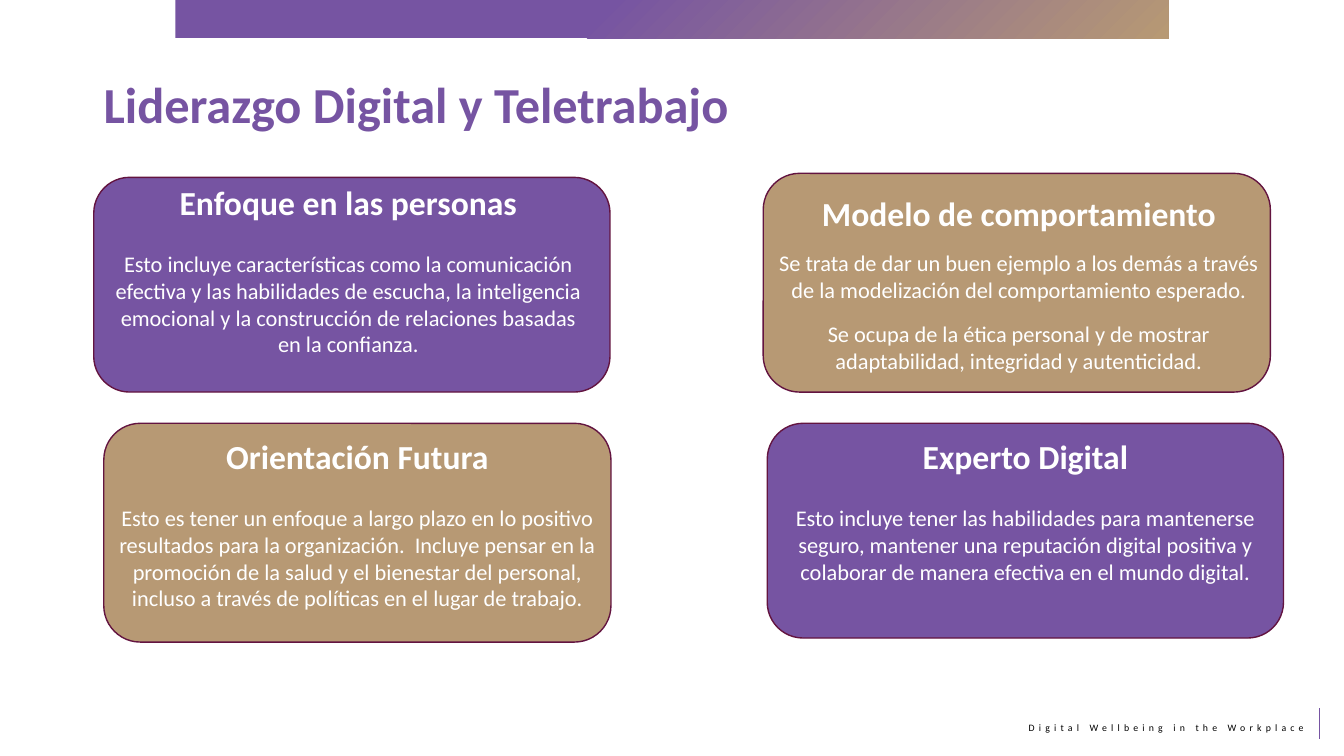
from dataclasses import dataclass

from lxml.etree import SubElement
from pptx import Presentation
from pptx.dml.color import RGBColor
from pptx.enum.shapes import MSO_CONNECTOR as Connector, MSO_SHAPE as Shape
from pptx.enum.text import MSO_ANCHOR as Anchor, PP_ALIGN as Align
from pptx.oxml import parse_xml
from pptx.oxml.ns import nsdecls, qn
from pptx.util import Inches, Pt


@dataclass(frozen=True)
class Theme:
    font: str = "Calibri"
    purple: str = "7654A2"
    tan: str = "B79974"
    border: str = "631440"
    white: str = "FFFFFF"
    black: str = "000000"
    title: int = 36
    heading: int = 24
    body: int = 16
    footer: int = 7


class SlideBuilder:
    def __init__(self, page, theme):
        self.page = page
        self.theme = theme

    def band(self, *place):
        band = self.page.shapes.add_shape(Shape.RECTANGLE, *map(Inches, place))
        band.shadow.inherit = False
        band.line.fill.background()
        band.fill.background()
        gradient = parse_xml(
            f'<a:gradFill {nsdecls("a")} rotWithShape="1"><a:gsLst>'
            f'<a:gs pos="0"><a:srgbClr val="{self.theme.tan}"/></a:gs>'
            f'<a:gs pos="58000"><a:srgbClr val="{self.theme.purple}"/></a:gs>'
            '</a:gsLst><a:path path="circle">'
            '<a:fillToRect l="100000" t="100000"/></a:path></a:gradFill>'
        )
        properties = band.element.spPr
        properties.replace(properties.find(qn("a:noFill")), gradient)

    def rule(self, *ends):
        rule = self.page.shapes.add_connector(Connector.STRAIGHT, *map(Inches, ends))
        rule.line.color.rgb = RGBColor.from_string(self.theme.purple)
        rule.line.width = Pt(0.75)
        SubElement(rule.element.spPr, qn("a:effectLst"))

    def panel(self, place, color):
        panel = self.page.shapes.add_shape(Shape.ROUNDED_RECTANGLE, *map(Inches, place))
        panel.shadow.inherit = False
        panel.fill.solid()
        panel.fill.fore_color.rgb = RGBColor.from_string(color)
        panel.line.color.rgb = RGBColor.from_string(self.theme.border)
        panel.line.width = Pt(1)

    def text_box(self, place):
        box = self.page.shapes.add_textbox(*map(Inches, place))
        frame = box.text_frame
        frame.word_wrap = True
        frame.vertical_anchor = Anchor.TOP
        return frame

    def fill_para(self, para, text, size, color, align, bold=False, after=0, tracking=0):
        para.alignment = align
        para.space_after = Pt(after)
        for index, line in enumerate(text.split("\n")):
            if index:
                para.add_line_break()
            span = para.add_run()
            span.text = line
            formats = {"name": self.theme.font, "size": Pt(size), "bold": bold}
            for name, value in formats.items():
                setattr(span.font, name, value)
            span.font.color.rgb = RGBColor.from_string(color)
            if tracking:
                span.font._element.set("spc", str(tracking * 100))

    def label(self, place, text, size, color, align, **options):
        frame = self.text_box(place)
        self.fill_para(frame.paragraphs[0], text, size, color, align, **options)

    def card_text(self, place, heading, gap, body):
        theme = self.theme
        frame = self.text_box(place)
        self.fill_para(frame.paragraphs[0], heading, theme.heading, theme.white,
                       Align.CENTER, bold=True, after=gap)
        for text in body:
            self.fill_para(frame.add_paragraph(), text, theme.body, theme.white,
                           Align.CENTER, after=12 if len(body) > 1 else 0)


def main():
    deck = Presentation()
    deck.slide_width, deck.slide_height = Inches(13.33), Inches(7.5)
    theme = Theme()
    builder = SlideBuilder(deck.slides.add_slide(deck.slide_layouts[6]), theme)

    builder.label((9.68, 7.11, 3.35, 0.22), "Digital Wellbeing in the Workplace",
                  theme.footer, theme.black, Align.RIGHT, tracking=3)
    builder.rule(13.09, 7.33, 13.09, 7.02)
    builder.band(1.74, 0, 9.85, 0.38)
    builder.label((0.93, 0.68, 11.46, 0.88), "Liderazgo Digital y Teletrabajo",
                  theme.title, theme.purple, Align.LEFT, bold=True)

    panel_sizes = {theme.purple: (5.12, 2.13), theme.tan: (5.03, 2.17)}
    cards = [
        (theme.purple, (0.93, 1.76), (0.99, 1.76, 4.93, 1.85),
         "Enfoque en las personas", 19.5,
         ["Esto incluye características como la comunicación efectiva y las "
          "habilidades de escucha, la inteligencia emocional y la construcción "
          "de relaciones basadas en la confianza."]),
        (theme.tan, (7.57, 1.72), (7.59, 1.86, 5.03, 1.75),
         "Modelo de comportamiento", 12,
         ["Se trata de dar un buen ejemplo a los demás a través de la "
          "modelización del comportamiento esperado.",
          "Se ocupa de la ética personal y de mostrar adaptabilidad, "
          "integridad y autenticidad."]),
        (theme.purple, (7.61, 4.2), (7.76, 4.28, 4.82, 1.58),
         "Experto Digital", 19.5,
         ["Esto incluye tener las habilidades para mantenerse seguro, mantener "
          "una reputación digital positiva y colaborar de manera efectiva en el "
          "mundo digital."]),
        (theme.tan, (1.03, 4.2), (1.03, 4.28, 5.03, 2.07),
         "Orientación Futura", 19.5,
         ["Esto es tener un enfoque a largo plazo en lo positivo\nresultados "
          "para la organización.  Incluye pensar en la promoción de la salud y "
          "el bienestar del personal, incluso a través de políticas en el lugar "
          "de trabajo."]),
    ]
    for color, corner, text_place, heading, gap, body in cards:
        builder.panel(corner + panel_sizes[color], color)
        builder.card_text(text_place, heading, gap, body)

    deck.save("out.pptx")


if __name__ == "__main__":
    main()
